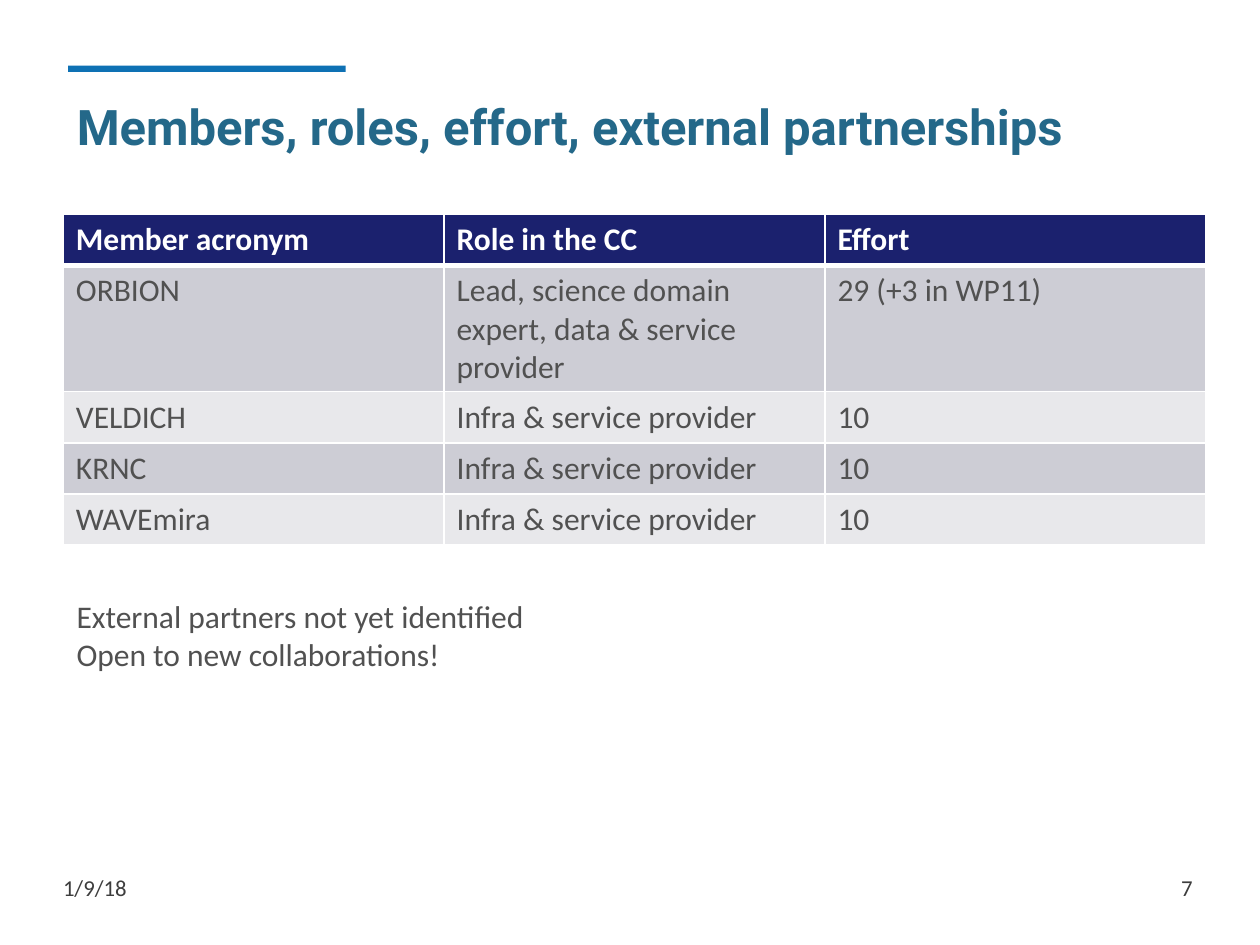
import pptx
import pptx.util
import pptx.dml.color
import pptx.enum.shapes
import pptx.enum.text
import pptx.oxml
from pptx.oxml.ns import nsdecls

Pt = pptx.util.Pt
RGB = pptx.dml.color.RGBColor
Align = pptx.enum.text.PP_ALIGN
Anchor = pptx.enum.text.MSO_ANCHOR

BLUE = RGB(0x0E, 0x71, 0xB4)
TEAL = RGB(0x24, 0x68, 0x89)
NAVY = RGB(0x1B, 0x21, 0x6E)
WHITE = RGB(0xFF, 0xFF, 0xFF)
DARK = RGB(0x3D, 0x3D, 0x3D)
GREY = RGB(0x51, 0x51, 0x51)
BANDS = (RGB(0xCD, 0xCD, 0xD5), RGB(0xE8, 0xE8, 0xEB))

HEAD = {"name": "Roboto", "size": Pt(28), "bold": True}
BODY = {"name": "Calibri", "size": Pt(18), "bold": False}
FOOT = {"name": "Calibri", "size": Pt(13), "bold": False}

ROWS = (
    ("Member acronym", "Role in the CC", "Effort"),
    ("ORBION", "Lead, science domain expert, data & service provider",
     "29 (+3 in WP11)"),
    ("VELDICH", "Infra & service provider", "10"),
    ("KRNC", "Infra & service provider", "10"),
    ("WAVEmira", "Infra & service provider", "10"),
)


def put(frame, text, style, color, align=Align.LEFT):
    frame.text = text
    frame.word_wrap = True
    for para in frame.paragraphs:
        para.alignment = align
        for run in para.runs:
            for key, value in style.items():
                setattr(run.font, key, value)
            run.font.color.rgb = color


def add_title(slide, text, box):
    title = slide.shapes.title
    title.left, title.top, title.width, title.height = map(Pt, box)
    put(title.text_frame, text, HEAD, TEAL)
    title.text_frame.auto_size = pptx.enum.text.MSO_AUTO_SIZE.NONE
    title.text_frame.vertical_anchor = Anchor.MIDDLE


def add_text(slide, text, box, style, color, align=Align.LEFT, inset=7.2):
    frame = slide.shapes.add_textbox(*map(Pt, box)).text_frame
    put(frame, text, style, color, align)
    frame.margin_left = Pt(inset)


def add_bar(slide, box):
    kind = pptx.enum.shapes.MSO_SHAPE.RECTANGLE
    bar = slide.shapes.add_shape(kind, *map(Pt, box))
    bar.shadow.inherit = False
    bar.fill.solid()
    bar.fill.fore_color.rgb = BLUE
    bar.line.fill.background()


def add_edge(cell, side, width):
    edge = pptx.oxml.parse_xml(
        f'<a:{side} {nsdecls("a")} w="{Pt(width)}"><a:solidFill>'
        f'<a:srgbClr val="{WHITE}"/></a:solidFill></a:{side}>')
    cell._tc.get_or_add_tcPr().append(edge)


def add_grid(slide, rows, box):
    shape = slide.shapes.add_table(len(rows), len(rows[0]), *map(Pt, box))
    for r, row in enumerate(rows):
        for c, text in enumerate(row):
            cell = shape.table.cell(r, c)
            style = dict(BODY, bold=r == 0)
            put(cell.text_frame, text, style, GREY if r else WHITE)
            for side in ("lnL", "lnR", "lnT", "lnB"):
                thick = (r, side) in ((0, "lnB"), (1, "lnT"))
                add_edge(cell, side, 3 if thick else 1)
            cell.fill.solid()
            cell.fill.fore_color.rgb = BANDS[(r - 1) % 2] if r else NAVY


def main():
    deck = pptx.Presentation()
    deck.slide_width, deck.slide_height = Pt(720), Pt(540)
    slide = deck.slides.add_slide(deck.slide_layouts[5])
    add_bar(slide, (39, 37.5, 158.5, 3.6))
    add_text(slide, "1/9/18", (36, 496, 168, 29), FOOT, DARK, inset=0)
    add_text(slide, "7", (520.5, 496, 168, 29), FOOT, DARK, Align.RIGHT)
    add_title(slide, "Members, roles, effort, external partnerships",
              (36.7, 49, 652.3, 45.4))
    add_grid(slide, ROWS, (36.2, 122.6, 652.8, 146))
    add_text(slide, "External partners not yet identified\n"
             "Open to new collaborations!", (36.7, 337.7, 652.3, 51),
             BODY, GREY)
    deck.save("out.pptx")


if __name__ == "__main__":
    main()
